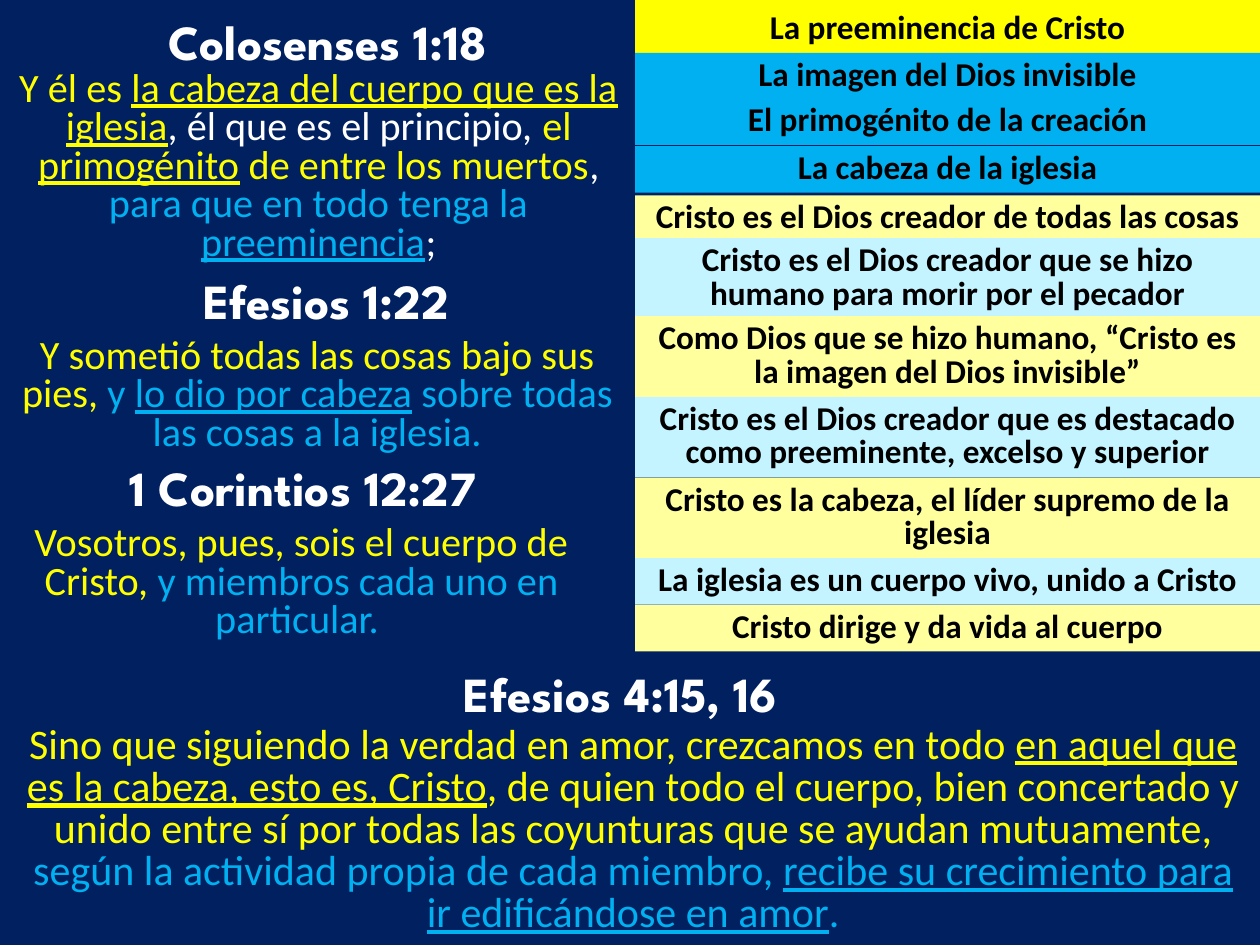
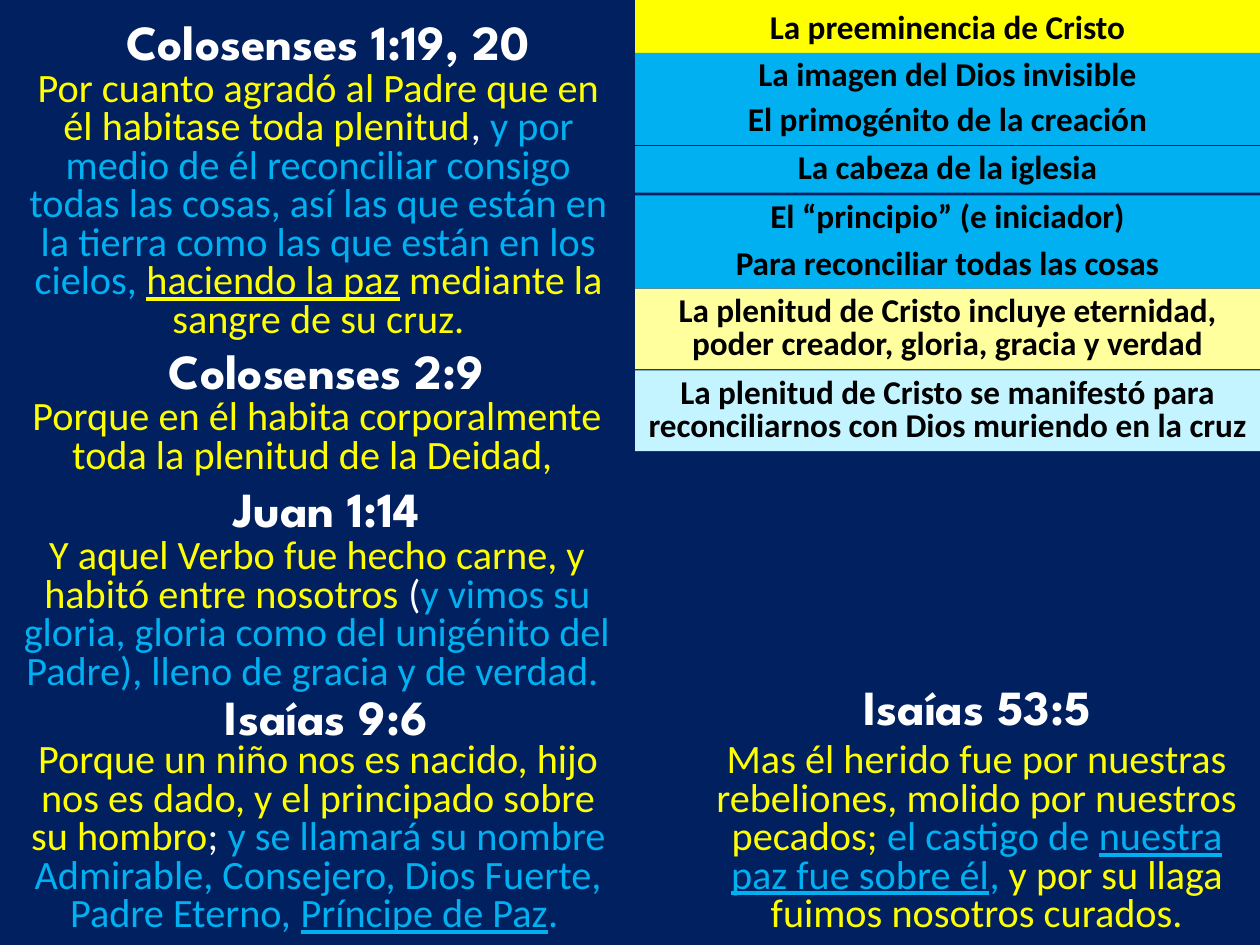
import pptx
import pptx.dml.color
import pptx.enum.shapes
import pptx.enum.text
import pptx.util
from pptx.util import Inches

COLORS = {
    "navy": "002060",
    "white": "FFFFFF",
    "black": "000000",
    "yellow": "FFFF00",
    "blue": "00B0F0",
    "cream": "FFFF9E",
    "ice": "C3F4FF",
}
BODY_FONT = "Calibri"
HEADING_FONT = "League Spartan"
TITLE = "La preeminencia de Cristo"
BAND_LEFT, BAND_WIDTH = 5.04, 4.96
BAND_HEIGHTS = {1: 0.37, 2: 0.64}
HEADING_HEIGHT = 0.57

# Bands: top, number of lines, fill, text
SHARED_BANDS = [
    (0.42, 1, "blue", "La imagen del Dios invisible"),
    (0.78, 1, "blue", "El primogénito de la creación"),
    (1.16, 1, "blue", "La cabeza de la iglesia"),
]

# Headings: left, top, width, text
# Verses: left, top, width, height, size, line spacing, runs of (text, color, underline)
SLIDES = [
    {
        "bands": [
            (1.55, 1, "cream", "Cristo es el Dios creador de todas las cosas"),
            (1.89, 2, "ice", "Cristo es el Dios creador que se hizo humano para morir por el pecador"),
            (2.51, 2, "cream", "Como Dios que se hizo humano, “Cristo es la imagen del Dios invisible”"),
            (3.15, 2, "ice", "Cristo es el Dios creador que es destacado como preeminente, excelso y superior"),
            (3.79, 2, "cream", "Cristo es la cabeza, el líder supremo de la iglesia"),
            (4.43, 1, "ice", "La iglesia es un cuerpo vivo, unido a Cristo"),
            (4.80, 1, "cream", "Cristo dirige y da vida al cuerpo"),
        ],
        "headings": [
            (0.12, 0.04, 4.96, "Colosenses 1:18"),
            (0.11, 2.10, 4.96, "Efesios 1:22"),
            (0.28, 3.58, 4.25, "1 Corintios 12:27"),
            (2.80, 5.22, 4.25, "Efesios 4:15, 16"),
        ],
        "verses": [
            (0.05, 0.52, 4.96, 1.65, 23, 22, [
                ("Y él es ", "yellow", False),
                ("la cabeza del cuerpo que es la iglesia", "yellow", True),
                (", él que es el principio, ", "white", False),
                ("el ", "yellow", False),
                ("primogénito", "yellow", True),
                (" de entre los muertos", "yellow", False),
                (", ", "white", False),
                ("para que en todo tenga la ", "blue", False),
                ("preeminencia", "blue", True),
                (";", "white", False),
            ]),
            (0.04, 2.64, 4.96, 1.03, 23, 22, [
                ("Y sometió todas las cosas bajo sus pies, ", "yellow", False),
                ("y ", "blue", False),
                ("lo dio por cabeza", "blue", True),
                (" sobre todas las cosas a la iglesia.", "blue", False),
            ]),
            (0.14, 4.13, 4.51, 1.03, 23, 22, [
                ("Vosotros, pues, sois el cuerpo de Cristo, ", "yellow", False),
                ("y miembros cada uno en particular. ", "blue", False),
            ]),
            (0.05, 5.71, 9.95, 1.79, 24, 24, [
                ("Sino que siguiendo la verdad en amor, crezcamos en todo ", "yellow", False),
                ("en aquel que es la cabeza, esto es, Cristo", "yellow", True),
                (", de quien todo el cuerpo, bien concertado y unido entre sí por todas "
                 "las coyunturas que se ayudan mutuamente, ", "yellow", False),
                ("según la actividad propia de cada miembro, ", "blue", False),
                ("recibe su crecimiento para ir edificándose en amor", "blue", True),
                (".", "blue", False),
            ]),
        ],
    },
    {
        "bands": [
            (1.55, 1, "blue", "El “principio” (e iniciador)"),
            (1.92, 1, "blue", "Para reconciliar todas las cosas"),
            (2.29, 2, "cream", "La plenitud de Cristo incluye eternidad, poder creador, gloria, gracia y verdad"),
            (2.94, 2, "ice", "La plenitud de Cristo se manifestó para reconciliarnos con Dios muriendo en la cruz"),
        ],
        "headings": [
            (0.12, 0.04, 4.96, "Colosenses 1:19, 20"),
            (0.11, 2.65, 4.96, "Colosenses 2:9"),
            (0.11, 3.75, 4.96, "Juan 1:14"),
            (0.11, 5.40, 4.96, "Isaías 9:6"),
            (6.19, 5.32, 3.13, "Isaías 53:5"),
        ],
        "verses": [
            (0.05, 0.52, 4.96, 2.27, 23, 22, [
                ("Por cuanto agradó al Padre que en él habitase toda plenitud", "yellow", False),
                (", ", "white", False),
                ("y por medio de él reconciliar consigo todas las cosas, así las que están "
                 "en la tierra como las que están en los cielos, ", "blue", False),
                ("haciendo la paz", "yellow", True),
                (" mediante la sangre de su cruz.", "yellow", False),
            ]),
            (0.04, 3.13, 4.96, 0.73, 23, 22, [
                ("Porque en él habita corporalmente toda la plenitud de la Deidad, ", "yellow", False),
            ]),
            (0.04, 4.23, 4.96, 1.34, 23, 22, [
                ("Y aquel Verbo fue hecho carne, y habitó entre nosotros ", "yellow", False),
                ("(", "white", False),
                ("y vimos su gloria, gloria como del unigénito del Padre), "
                 "lleno de gracia y de verdad. ", "blue", False),
            ]),
            (0.05, 5.85, 4.96, 1.65, 23, 22, [
                ("Porque un niño nos es nacido, hijo nos es dado, "
                 "y el principado sobre su hombro", "yellow", False),
                ("; ", "white", False),
                ("y se llamará su nombre Admirable, Consejero, Dios Fuerte, Padre Eterno, ", "blue", False),
                ("Príncipe de Paz", "blue", True),
                (". ", "blue", False),
            ]),
            (5.55, 5.85, 4.41, 1.65, 23, 22, [
                ("Mas él herido fue por nuestras rebeliones, molido por nuestros pecados; ", "yellow", False),
                ("el castigo de ", "blue", False),
                ("nuestra paz fue sobre él", "blue", True),
                (", ", "blue", False),
                ("y por su llaga fuimos nosotros curados.", "yellow", False),
            ]),
        ],
    },
]


def write_runs(shape, runs, font_name, size, bold=False, line_spacing=None):
    """Fill the shape with one centred paragraph of (text, color, underline) runs."""
    text_frame = shape.text_frame
    text_frame.word_wrap = True
    text_frame.auto_size = pptx.enum.text.MSO_AUTO_SIZE.SHAPE_TO_FIT_TEXT
    paragraph = text_frame.paragraphs[0]
    paragraph.alignment = pptx.enum.text.PP_ALIGN.CENTER
    if line_spacing:
        paragraph.line_spacing = pptx.util.Pt(line_spacing)
    for text, color, underline in runs:
        run = paragraph.add_run()
        run.text = text
        run.font.name = font_name
        run.font.size = pptx.util.Pt(size)
        run.font.bold = bold
        run.font.underline = underline
        run.font.color.rgb = pptx.dml.color.RGBColor.from_string(COLORS[color])


def format_band(shape, fill, text):
    shape.fill.solid()
    shape.fill.fore_color.rgb = pptx.dml.color.RGBColor.from_string(COLORS[fill])
    shape.line.fill.background()
    shape.text_frame.vertical_anchor = pptx.enum.text.MSO_ANCHOR.MIDDLE
    write_runs(shape, [(text, "black", False)], BODY_FONT, 19, bold=True, line_spacing=19)


presentation = pptx.Presentation()
presentation.slide_width = Inches(10)
presentation.slide_height = Inches(7.5)
background = presentation.slide_master.background.fill
background.solid()
background.fore_color.rgb = pptx.dml.color.RGBColor.from_string(COLORS["navy"])
title_only_layout = presentation.slide_layouts.get_by_name("Title Only")

for content in SLIDES:
    slide = presentation.slides.add_slide(title_only_layout)

    title = slide.shapes.title
    title.left, title.top = Inches(BAND_LEFT), Inches(0.05)
    title.width, title.height = Inches(BAND_WIDTH), Inches(BAND_HEIGHTS[1])
    format_band(title, "yellow", TITLE)

    for top, line_count, fill, text in SHARED_BANDS + content["bands"]:
        band = slide.shapes.add_shape(
            pptx.enum.shapes.MSO_SHAPE.RECTANGLE,
            Inches(BAND_LEFT), Inches(top), Inches(BAND_WIDTH), Inches(BAND_HEIGHTS[line_count]))
        band.shadow.inherit = False
        format_band(band, fill, text)

    for left, top, width, text in content["headings"]:
        heading = slide.shapes.add_textbox(
            Inches(left), Inches(top), Inches(width), Inches(HEADING_HEIGHT))
        write_runs(heading, [(text, "white", False)], HEADING_FONT, 28, bold=True)

    for left, top, width, height, size, line_spacing, runs in content["verses"]:
        verse = slide.shapes.add_textbox(
            Inches(left), Inches(top), Inches(width), Inches(height))
        write_runs(verse, runs, BODY_FONT, size, line_spacing=line_spacing)

presentation.save("out.pptx")
